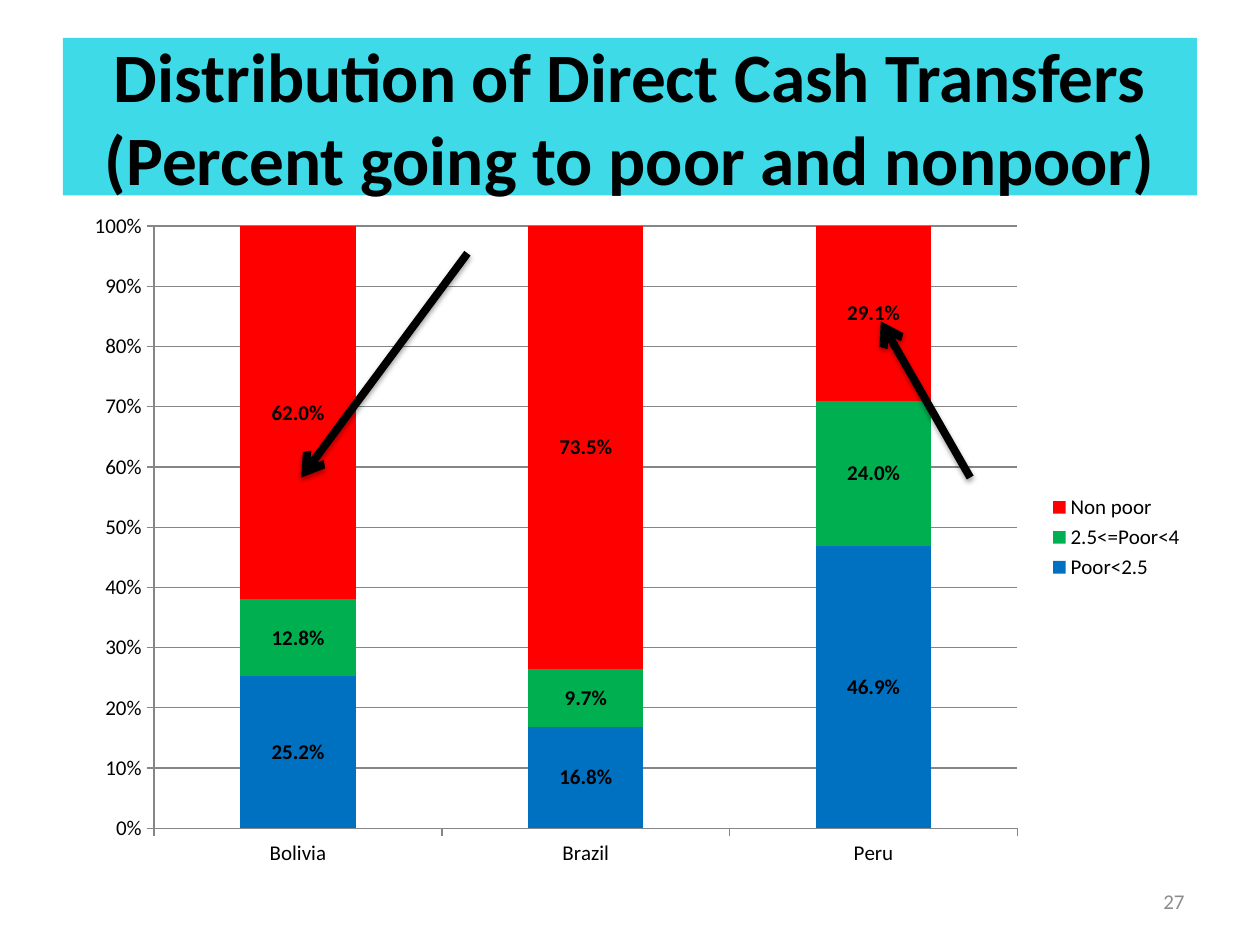
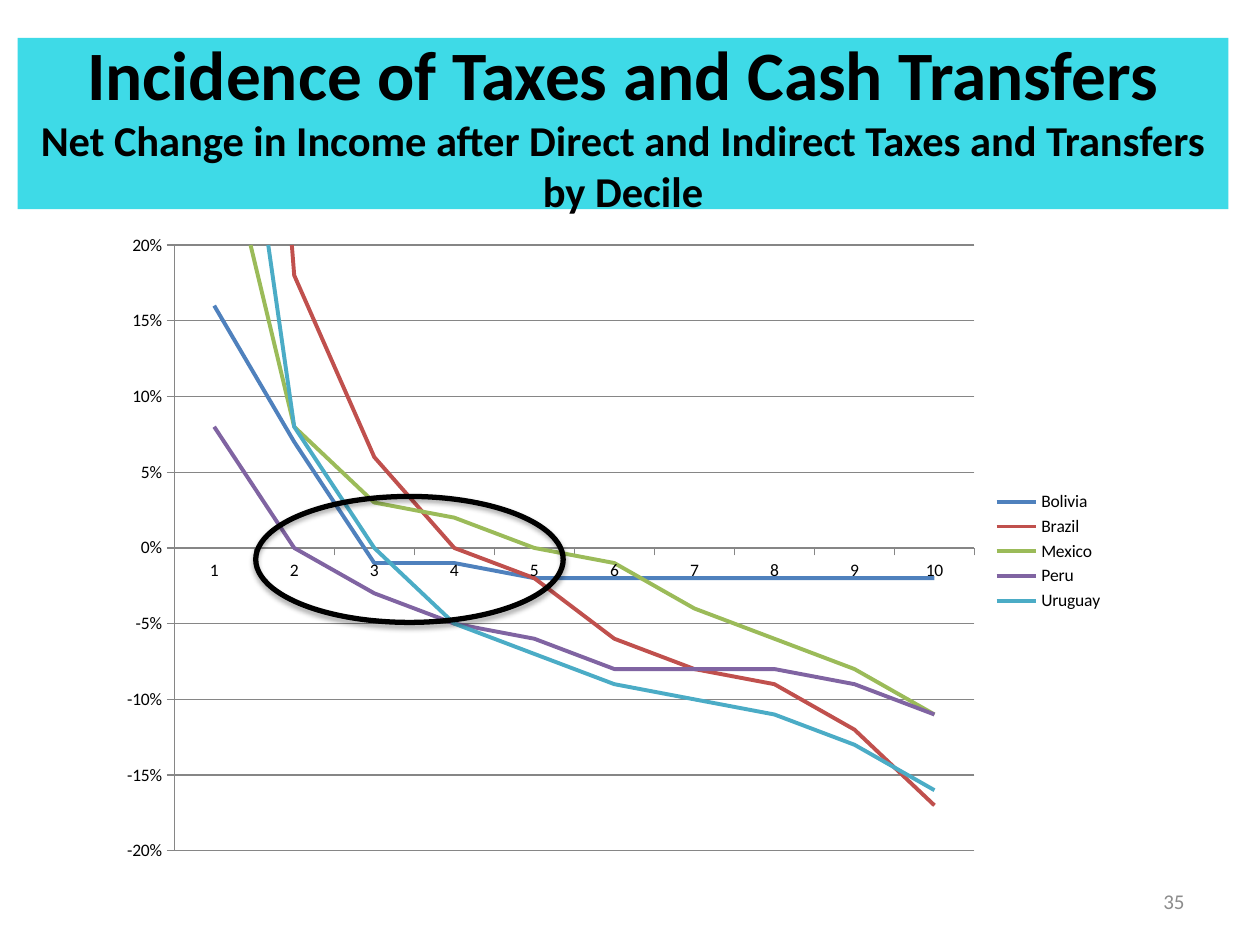
from dataclasses import dataclass

from lxml.etree import SubElement
from pptx import Presentation
from pptx.chart.data import CategoryChartData
from pptx.dml.color import RGBColor as RGB
from pptx.enum.chart import XL_CHART_TYPE as CHART, XL_LEGEND_POSITION as LEGEND
from pptx.enum.shapes import MSO_CONNECTOR as CONN, MSO_SHAPE as SHAPE
from pptx.enum.text import MSO_ANCHOR as ANCHOR, PP_ALIGN as ALIGN
from pptx.oxml.ns import qn
from pptx.util import Emu, Pt

PX = 9144  # EMU per px, 100 px to the inch


@dataclass(frozen=True)
class Theme:
    font: str = "Calibri"
    ink: str = "000000"
    band: str = "3EDAE7"
    muted: str = "8C8C8C"
    grid: str = "868686"
    title: float = 39.6
    subtitle: float = 24.3
    body: float = 12
    small: float = 10


T = Theme()

TRANSFER_SHARES = {
    "Poor<2.5": ("0070C0", [0.252, 0.168, 0.469]),
    "2.5<=Poor<4": ("00B050", [0.128, 0.097, 0.24]),
    "Non poor": ("FF0000", [0.62, 0.735, 0.291]),
}
INCOME_CHANGES = {
    "Bolivia": ("4F81BD", [0.16, 0.07, -0.01, -0.01, -0.02, -0.02, -0.02, -0.02, -0.02, -0.02]),
    "Brazil": ("C0504D", [0.85, 0.18, 0.06, 0, -0.02, -0.06, -0.08, -0.09, -0.12, -0.17]),
    "Mexico": ("9BBB59", [0.3, 0.08, 0.03, 0.02, 0, -0.01, -0.04, -0.06, -0.08, -0.11]),
    "Peru": ("8064A2", [0.08, 0, -0.03, -0.05, -0.06, -0.08, -0.08, -0.08, -0.09, -0.11]),
    "Uruguay": ("4BACC6", [0.45, 0.08, 0, -0.05, -0.07, -0.09, -0.1, -0.11, -0.13, -0.16]),
}


def px(*lengths):
    return [Emu(n * PX) for n in lengths]


def style_font(font, size, color=T.ink, bold=False):
    font.name, font.size, font.bold = T.font, Pt(size), bold
    font.color.rgb = RGB.from_string(color)


def style_line(line, color, width):
    line.color.rgb = RGB.from_string(color)
    line.width = Pt(width)


def set_text(sp, lines, sizes, color, align, bold=False):
    tf = sp.text_frame
    tf.word_wrap = True
    tf.vertical_anchor = ANCHOR.MIDDLE
    p = tf.paragraphs[0]
    p.text = "\v".join(lines)
    p.alignment = align
    for r, size in zip(p.runs, sizes):
        style_font(r.font, size, color, bold)


# Shared frame: title band and page number
def add_frame(prs, box, lines, sizes, number):
    slide = prs.slides.add_slide(prs.slide_layouts[6])
    band = slide.shapes.add_shape(SHAPE.RECTANGLE, *px(*box))
    band.shadow.inherit = False
    band.fill.solid()
    band.fill.fore_color.rgb = RGB.from_string(T.band)
    band.line.fill.background()
    set_text(band, lines, sizes, T.ink, ALIGN.CENTER, bold=True)
    page = slide.shapes.add_textbox(*px(717, 695, 233, 40))
    set_text(page, [number], [T.body], T.muted, ALIGN.RIGHT)
    return slide


# Charts
def set_plot_box(chart, box):
    area = chart.plots[0]._element.getparent()
    for old in area.findall(qn("c:layout")):
        area.remove(old)
    layout = SubElement(area, qn("c:layout"))
    area.insert(0, layout)
    manual = SubElement(layout, qn("c:manualLayout"))
    settings = [("layoutTarget", "inner"), ("xMode", "edge"), ("yMode", "edge")]
    for tag, val in settings + list(zip("xywh", box)):
        SubElement(manual, qn("c:" + tag)).set("val", str(val))


def add_chart(slide, kind, box, plot_box, cats, series, size):
    data = CategoryChartData(number_format="0.0%")
    data.categories = cats
    for name, (_, values) in series.items():
        data.add_series(name, values)
    chart = slide.shapes.add_chart(kind, *px(*box), data).chart
    chart.has_title = False
    style_font(chart.font, size)
    chart.has_legend = True
    chart.legend.position = LEGEND.RIGHT
    chart.legend.include_in_layout = False
    style_font(chart.legend.font, size)
    for axis in (chart.category_axis, chart.value_axis):
        style_line(axis.format.line, T.grid, 0.75)
        style_font(axis.tick_labels.font, size)
    values = chart.value_axis
    values.has_major_gridlines = True
    style_line(values.major_gridlines.format.line, T.grid, 0.75)
    values.tick_labels.number_format = "0%"
    values.tick_labels.number_format_is_linked = False
    chart.plots[0].vary_by_categories = False
    set_plot_box(chart, plot_box)
    return chart


def add_share_columns(slide):
    chart = add_chart(slide, CHART.COLUMN_STACKED_100, (60, 158, 890, 537),
                      (0.07, 0.04, 0.77, 0.89), ["Bolivia", "Brazil", "Peru"],
                      TRANSFER_SHARES, T.body)
    chart.value_axis.major_unit = 0.1
    plot = chart.plots[0]
    plot.gap_width, plot.overlap = 150, 100
    for ser, (color, _) in zip(plot.series, TRANSFER_SHARES.values()):
        ser.format.fill.solid()
        ser.format.fill.fore_color.rgb = RGB.from_string(color)
        labels = ser.data_labels
        labels.show_value = True
        labels.number_format = "0.0%"
        labels.number_format_is_linked = False
        style_font(labels.font, T.body, bold=True)


def add_decile_lines(slide):
    deciles = [str(n) for n in range(1, 11)]
    chart = add_chart(slide, CHART.LINE, (82, 179, 804, 517),
                      (0.07, 0.03, 0.79, 0.93), deciles, INCOME_CHANGES, T.small)
    axis = chart.value_axis
    axis.minimum_scale, axis.maximum_scale, axis.major_unit = -0.2, 0.2, 0.05
    for ser, (color, _) in zip(chart.plots[0].series, INCOME_CHANGES.values()):
        ser.smooth = False
        style_line(ser.format.line, color, 2.25)


# Highlights: arrows and ring, each with a soft shadow below
def add_shadow(sp, dist, alpha):
    effects = SubElement(sp._element.spPr, qn("a:effectLst"))
    shadow = SubElement(effects, qn("a:outerShdw"), blurRad=str(Pt(3.1)),
                        dist=str(Pt(dist)), dir="5400000", rotWithShape="0")
    color = SubElement(shadow, qn("a:srgbClr"), val=T.ink)
    SubElement(color, qn("a:alpha"), val=str(alpha * 1000))


def add_arrow(slide, start, end):
    arrow = slide.shapes.add_connector(CONN.STRAIGHT, *px(*start, *end))
    style_line(arrow.line, T.ink, 4.5)
    SubElement(arrow.line._get_or_add_ln(), qn("a:tailEnd"), type="arrow")
    add_shadow(arrow, 1.6, 38)


def add_ring(slide, box):
    ring = slide.shapes.add_shape(SHAPE.OVAL, *px(*box))
    ring.fill.background()
    style_line(ring.line, T.ink, 3)
    add_shadow(ring, 1.8, 35)


def main():
    prs = Presentation()
    prs.slide_width, prs.slide_height = px(1000, 750)

    # Direct cash transfers
    slide = add_frame(prs, (50, 30, 900, 125),
                      ["Distribution of Direct Cash Transfers",
                       "(Percent going to poor and nonpoor)"],
                      [T.title, T.title], "27")
    add_share_columns(slide)
    add_arrow(slide, (770, 379), (699, 255))
    add_arrow(slide, (371, 201), (239, 379))

    # Net change in income by decile
    slide = add_frame(prs, (14, 30, 961, 136),
                      ["Incidence of Taxes and Cash Transfers",
                       "Net Change in Income after Direct and Indirect Taxes "
                       "and Transfers by Decile"],
                      [T.title, T.subtitle], "35")
    add_decile_lines(slide)
    add_ring(slide, (203, 394, 244, 100))

    prs.save("out.pptx")


if __name__ == "__main__":
    main()
